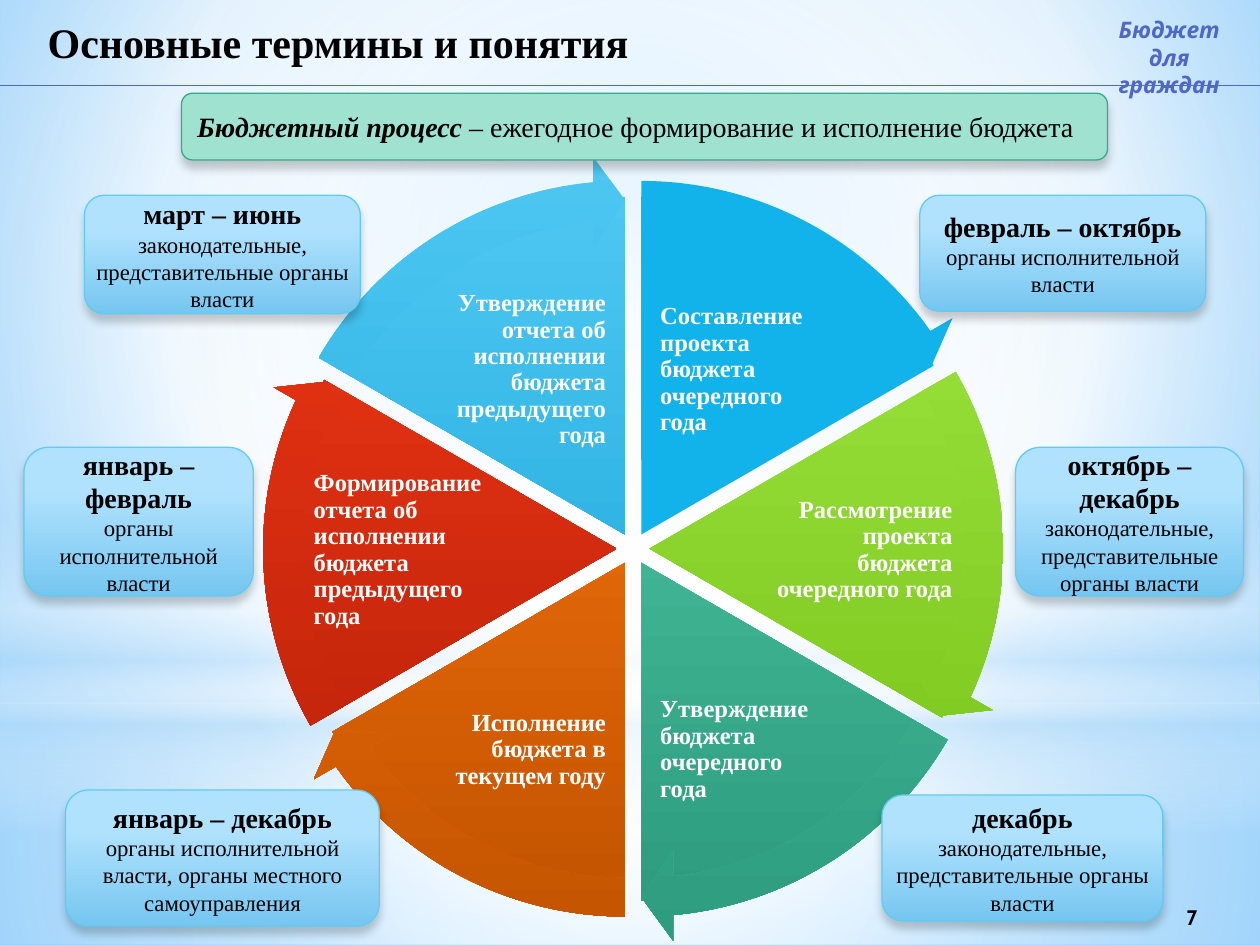
import math

from lxml import etree
from pptx import Presentation
from pptx import util as u
from pptx.dml.color import RGBColor
from pptx.enum import shapes, text
from pptx.oxml.ns import nsdecls, qn

CELL = u.Inches(0.1)  # the page is a grid of 100 columns by 75 rows
COLUMNS, ROWS = 100, 75
KIND, ALIGN, ANCHOR = shapes.MSO_SHAPE, text.PP_ALIGN, text.MSO_ANCHOR

BLACK, WHITE = RGBColor(0, 0, 0), RGBColor(255, 255, 255)
MIST, INDIGO = RGBColor(0xB4, 0xDC, 0xFA), RGBColor(0x4E, 0x67, 0xC8)
SKY, DEEP_SKY = RGBColor(0x9E, 0xD5, 0xFF), RGBColor(0x5B, 0xB9, 0xFF)
LABEL_TOP, LABEL_END = RGBColor(0xB1, 0xE2, 0xFD), RGBColor(0x76, 0xC6, 0xF1)
LABEL_EDGE = RGBColor(0x5E, 0xCC, 0xF3)
MINT, MINT_EDGE = RGBColor(0x9E, 0xE2, 0xCF), RGBColor(0x34, 0xAC, 0x8B)
BLUE = RGBColor(0x12, 0xB2, 0xEB)
LIME, LIME_END = RGBColor(0xA0, 0xE8, 0x44), RGBColor(0x75, 0xC0, 0x16)
TEAL, TEAL_END = RGBColor(0x52, 0xCB, 0xA9), RGBColor(0x2E, 0x9D, 0x7F)
ORANGE, ORANGE_END = RGBColor(0xFF, 0x78, 0x13), RGBColor(0xC4, 0x54, 0x00)
RED, RED_END = RGBColor(0xF0, 0x36, 0x17), RGBColor(0xB5, 0x20, 0x07)
AZURE, AZURE_END = RGBColor(0x4E, 0xC7, 0xF2), RGBColor(0x11, 0xA1, 0xD4)

SERIF, SANS = "Times New Roman", "Cabin"
HEAD = dict(name=SERIF, size=u.Pt(16), bold=True)
BODY = dict(name=SERIF, size=u.Pt(13), bold=False)
TITLE = dict(name=SERIF, size=u.Pt(24), bold=True)
WEDGE = dict(name=SERIF, size=u.Pt(14), bold=True)
BADGE = dict(name=SANS, size=u.Pt(13), bold=True, italic=True)
NUMBER = dict(name=SANS, size=u.Pt(12), bold=True)

CENTRE = (50.25, 43.55)
PIE_RADIUS, ARROW_RADIUS, GAP = 26.8, 30.1, 1.3
TURN = 36  # 60 degrees in adjustment units
STAGES = [  # wording, fill stops, text centre relative to the wheel, text size
    ("Составление проекта бюджета очередного года", [(0, BLUE)], (8.95, -14.2), (14, 10.8)),
    ("Рассмотрение проекта бюджета очередного года", [(0, LIME), (100, LIME_END)], (18.2, 0.1), (14.7, 10.5)),
    ("Утверждение бюджета очередного года", [(0, TEAL), (100, TEAL_END)], (8.95, 15.95), (14, 10.8)),
    ("Исполнение бюджета в текущем году", [(0, ORANGE), (100, ORANGE_END)], (-8.95, 15.95), (14, 10.8)),
    ("Формирование отчета об исполнении бюджета предыдущего года", [(0, RED), (100, RED_END)],
     (-18.2, 0.1), (14.7, 10.5)),
    ("Утверждение отчета об исполнении бюджета предыдущего года", [(0, AZURE), (100, AZURE_END)],
     (-8.95, -14.2), (14, 10.8)),
]
LAWMAKERS = "законодательные, представительные органы власти"
EXECUTIVE = "органы исполнительной власти"
LABELS = [
    ((6.7, 15.5, 21.9, 9.4), "март – июнь", LAWMAKERS),
    ((73, 15.5, 22.7, 9.2), "февраль – октябрь", EXECUTIVE),
    ((80.6, 35.5, 18.1, 11.8), "октябрь – декабрь", LAWMAKERS),
    ((70, 63.1, 22.3, 10), "декабрь", LAWMAKERS),
    ((5.2, 62.7, 24.9, 10.8), "январь – декабрь",
     "органы исполнительной власти, органы местного самоуправления"),
    ((1.9, 35.5, 18.2, 11.8), "январь – февраль", EXECUTIVE),
]


def emu(lengths):
    return [round(length * CELL) for length in lengths]


def square(centre, radius):
    return centre[0] - radius, centre[1] - radius, 2 * radius, 2 * radius


def paint(owner, element, stops, focus=None):
    """Fill with one colour, or a gradient: downward, or round a focus rectangle."""
    owner.fill.solid()
    if len(stops) == 1:
        owner.fill.fore_color.rgb = stops[0][1]
        return
    grad = etree.fromstring(f'<a:gradFill {nsdecls("a")} rotWithShape="1"><a:gsLst/></a:gradFill>')
    for position, colour, *opacity in stops:
        stop = etree.SubElement(grad[0], qn("a:gs"), pos=str(position * 1000))
        tint = etree.SubElement(stop, qn("a:srgbClr"), val=str(colour))
        if opacity:
            etree.SubElement(tint, qn("a:alpha"), val=str(opacity[0] * 1000))
    if focus:
        circle = etree.SubElement(grad, qn("a:path"), path="circle")
        sides = {side: str(share * 1000) for side, share in zip("ltrb", focus)}
        etree.SubElement(circle, qn("a:fillToRect"), sides)
    else:
        etree.SubElement(grad, qn("a:lin"), ang="5400000", scaled="0")
    solid = element.find(qn("a:solidFill"))
    element.replace(solid, grad)


def add_figure(page, kind, box, stops, focus=None, edge=None, adjust=()):
    figure = page.shapes.add_shape(kind, *emu(box))
    figure.shadow.inherit = False
    paint(figure, figure._element.spPr, stops, focus)
    if edge is None:
        figure.line.fill.background()
    else:
        figure.line.color.rgb, figure.line.width = edge, u.Pt(0.75)
    for index, value in enumerate(adjust):
        figure.adjustments[index] = value
    return figure


def add_drop_shadow(figure):
    effects = figure._element.spPr.find(qn("a:effectLst"))
    effects.append(etree.fromstring(
        f'<a:outerShdw {nsdecls("a")} blurRad="{u.Pt(5)}" dist="{u.Pt(4)}" dir="5400000" rotWithShape="0">'
        f'<a:srgbClr val="{BLACK}"><a:alpha val="20000"/></a:srgbClr></a:outerShdw>'))


def write(box, paragraphs, colour=BLACK, align=ALIGN.LEFT, anchor=ANCHOR.MIDDLE, inset=None, spacing=None):
    """Each paragraph is a list of (wording, font format) spans."""
    frame = box.text_frame
    frame.word_wrap, frame.vertical_anchor = True, anchor
    if inset is not None:
        for side in ("left", "top", "right", "bottom"):
            setattr(frame, f"margin_{side}", u.Inches(inset))
    for index, spans in enumerate(paragraphs):
        para = frame.add_paragraph() if index else frame.paragraphs[0]
        para.alignment, para.line_spacing = align, spacing
        for wording, style in spans:
            span = para.add_run()
            span.text = wording
            span.font.color.rgb = colour
            for name, value in style.items():
                setattr(span.font, name, value)


def add_text(page, box, paragraphs, **layout):
    write(page.shapes.add_textbox(*emu(box)), paragraphs, **layout)


def draw_backdrop(page):
    page.background.fill.solid()
    paint(page.background, page._element.find(".//" + qn("p:bgPr")),
          [(0, SKY), (60, WHITE), (100, DEEP_SKY)], (20, 10, 20, 60))
    middle, horizon = (50,) * 4, 55.8
    add_figure(page, KIND.RECTANGLE, (0, horizon, COLUMNS, ROWS - horizon),
               [(0, WHITE, 91), (37, WHITE, 76), (100, MIST, 79)], middle)
    add_figure(page, KIND.RECTANGLE, (0, 0, COLUMNS, horizon),
               [(0, WHITE, 89), (48, WHITE, 62), (100, MIST, 79)], middle)
    add_figure(page, KIND.RECTANGLE, (0, 41.2, COLUMNS, 25),
               [(0, WHITE, 0), (29, WHITE, 30), (45, MIST, 40), (55, WHITE, 26), (65, MIST, 60), (100, WHITE, 0)])
    add_figure(page, KIND.OVAL, (0, 17.5, COLUMNS, horizon), [(0, WHITE, 100), (56, WHITE, 0)], middle)


def draw_wheel(page, centre):
    arrows = []
    for index, (wording, stops, offset, size) in enumerate(STAGES):
        angle = math.radians(60 * index - 60)
        hub = centre[0] + GAP * math.cos(angle), centre[1] + GAP * math.sin(angle)
        start, end = [(162 + TURN * step) % 216 for step in (index, index + 1)]
        add_figure(page, KIND.PIE, square(hub, PIE_RADIUS), stops, adjust=(start, end))
        box = [c + o - s / 2 for c, o, s in zip(centre, offset, size)] + list(size)
        add_text(page, box, [[(wording, WEDGE)]], colour=WHITE, inset=0.02, spacing=0.9,
                 align=ALIGN.RIGHT if index % 2 else ALIGN.LEFT)
        arrows.append((square(hub, ARROW_RADIUS), stops, (0.05085, 3.275, (end - 3.275) % 216, start, 0.0593)))
    for box, stops, adjust in arrows:
        add_figure(page, KIND.CIRCULAR_ARROW, box, stops, adjust=adjust)


def draw_label(page, box, period, bodies):
    label = add_figure(page, KIND.ROUNDED_RECTANGLE, box, [(28, LABEL_TOP), (100, LABEL_END)], edge=LABEL_EDGE)
    add_drop_shadow(label)
    write(label, [[(period, HEAD)], [(bodies, BODY)]], align=ALIGN.CENTER, inset=0)


def draw_banner(page, box):
    banner = add_figure(page, KIND.ROUNDED_RECTANGLE, box, [(0, MINT)], edge=MINT_EDGE)
    add_drop_shadow(banner)
    write(banner, [[("Бюджетный процесс", {**HEAD, "italic": True}),
                    (" – ежегодное формирование и исполнение бюджета", {**HEAD, "bold": False})]])


def draw_header(page, top, rule_row):
    add_text(page, (2.8, top, 50, 5.9), [[("Основные термины и понятия", TITLE)]], anchor=ANCHOR.TOP)
    rule = page.shapes.add_connector(shapes.MSO_CONNECTOR.STRAIGHT, *emu((0, rule_row, COLUMNS, rule_row)))
    rule.line.color.rgb, rule.line.width = INDIGO, u.Pt(0.75)
    etree.SubElement(rule._element.spPr, qn("a:effectLst"))
    add_text(page, (86.1, top, 13.4, 5.4), [[("Бюджет", BADGE)], [("для граждан", BADGE)]],
             colour=INDIGO, align=ALIGN.CENTER, anchor=ANCHOR.TOP)


def main():
    deck = Presentation()
    deck.slide_width, deck.slide_height = COLUMNS * CELL, ROWS * CELL
    page = deck.slides.add_slide(deck.slide_layouts[6])
    draw_backdrop(page)
    add_text(page, (89.1, 70.8, 11, 4), [[("7", NUMBER)]], align=ALIGN.CENTER)
    draw_wheel(page, CENTRE)
    for label in LABELS:
        draw_label(page, *label)
    draw_banner(page, (14.4, 7.4, 73.5, 5.3))
    draw_header(page, 0.8, 6.8)
    deck.save("out.pptx")


if __name__ == "__main__":
    main()
